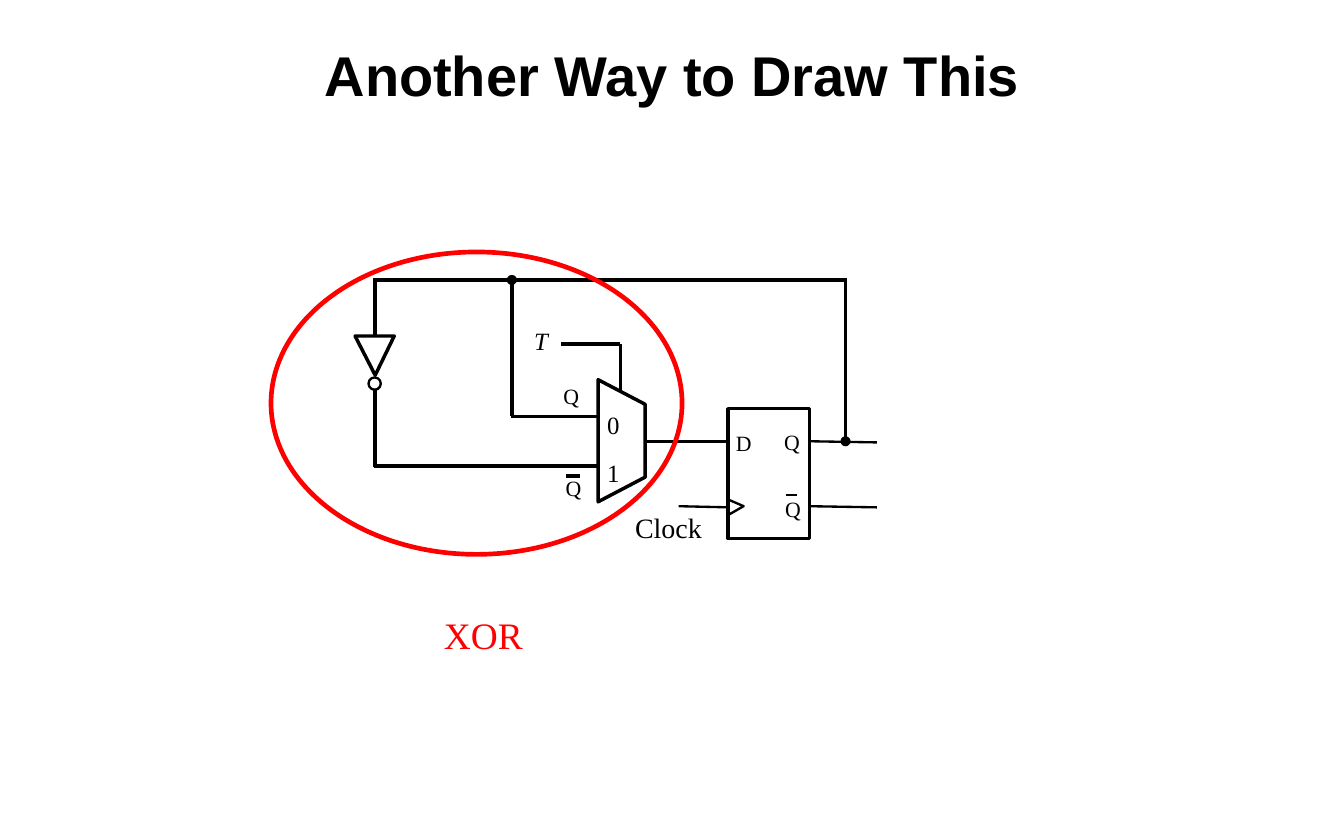
"""Draw a T flip-flop built from a multiplexer, an inverter and a D flip-flop."""
from pptx import Presentation
from pptx.dml.color import RGBColor as RGB
from pptx.enum.shapes import MSO_CONNECTOR as CONN, MSO_SHAPE as SHAPE
from pptx.enum.text import MSO_ANCHOR as ANCHOR, MSO_AUTO_SIZE as AUTO, PP_ALIGN as ALIGN
from pptx.oxml.ns import qn
from pptx.util import Inches, Pt

COLORS = {"ink": "000000", "paper": "FFFFFF", "mark": "FF0000"}


class Circuit:
    head_font, label_font = "Arial", "Times New Roman"

    def __init__(self, slide):
        self.s = slide

    def color(self, name):
        return RGB.from_string(COLORS[name])

    def run(self, p, text, size, font, color="ink", bold=False, italic=False):
        r = p.add_run()
        r.text = text
        f = r.font
        f.name, f.size, f.bold, f.italic = font, Pt(size), bold, italic
        f.color.rgb = self.color(color)

    def title(self, text, x, y, w, h):
        sp = self.s.shapes.title
        sp.left, sp.top, sp.width, sp.height = map(Inches, (x, y, w, h))
        tf = sp.text_frame
        tf.vertical_anchor = ANCHOR.MIDDLE
        p = tf.paragraphs[0]
        p.alignment = ALIGN.CENTER
        self.run(p, text, 36, self.head_font, bold=True)

    def label(self, text, x, y, w, h, size, color="ink", italic=False, align=ALIGN.LEFT):
        sp = self.s.shapes.add_textbox(*map(Inches, (x, y, w, h)))
        tf = sp.text_frame
        tf.word_wrap, tf.auto_size = False, AUTO.SHAPE_TO_FIT_TEXT
        tf.margin_left = tf.margin_top = tf.margin_right = tf.margin_bottom = 0
        p = tf.paragraphs[0]
        p.alignment = align
        self.run(p, text, size, self.label_font, color, italic=italic)

    def wire(self, x1, y1, x2, y2, width=2.25):
        c = self.s.shapes.add_connector(CONN.STRAIGHT, *map(Inches, (x1, y1, x2, y2)))
        c.line.width = Pt(width)
        c.line.color.rgb = self.color("ink")
        sp_pr = c._element.spPr
        sp_pr.append(sp_pr.makeelement(qn("a:effectLst"), {}))

    def style(self, sp, width, fill, line):
        sp.shadow.inherit = False
        if fill:
            sp.fill.solid()
            sp.fill.fore_color.rgb = self.color(fill)
        else:
            sp.fill.background()
        sp.line.width = Pt(width)
        sp.line.color.rgb = self.color(line)

    def shape(self, kind, x, y, w, h, width, fill=None, line="ink"):
        sp = self.s.shapes.add_shape(kind, *map(Inches, (x, y, w, h)))
        self.style(sp, width, fill, line)

    def outline(self, points, width=2.25, close=True):
        pts = [(Inches(x), Inches(y)) for x, y in points]
        fb = self.s.shapes.build_freeform(*pts[0])
        fb.add_line_segments(pts[1:], close=close)
        self.style(fb.convert_to_shape(), width, None, "ink")

    def dot(self, x, y):
        self.shape(SHAPE.OVAL, x - 0.04, y - 0.04, 0.08, 0.08, 0.75, "ink")


def main():
    prs = Presentation()
    prs.slide_width, prs.slide_height = Inches(12), Inches(7.5)
    c = Circuit(prs.slides.add_slide(prs.slide_layouts[5]))
    c.title("Another Way to Draw This", 1, 0.33, 10, 0.67)

    c.shape(SHAPE.RECTANGLE, 6.5, 3.65, 0.73, 1.16, 2.25, "paper")
    c.outline([(6.5, 4.6), (6.64, 4.52), (6.5, 4.46)], 1.5, close=False)
    c.outline([(5.76, 4.26), (5.76, 3.61), (5.34, 3.39), (5.34, 4.48)])
    c.outline([(3.35, 3.35), (3.17, 3), (3.52, 3)])

    for ends in [
        (4.56, 3.72, 5.34, 3.72), (3.34, 4.16, 5.34, 4.16), (6.5, 3.94, 5.76, 3.94),
        (5.54, 3.07, 5.54, 3.49), (5.01, 3.07, 5.54, 3.07),
        (7.56, 2.5, 4.56, 2.5), (3.33, 2.5, 4.58, 2.5),
        (4.57, 2.51, 4.57, 3.71), (7.55, 2.52, 7.55, 3.94),
    ]:
        c.wire(*ends)
    for ends in [(6.06, 4.52, 6.51, 4.53), (7.83, 3.95, 7.23, 3.94), (7.83, 4.53, 7.23, 4.52)]:
        c.wire(*ends, width=1.5)
    for top, bottom in [(2.49, 2.99), (3.48, 4.17)]:
        c.wire(3.35, top, 3.35, bottom, 2.5)
    c.wire(7.12, 4.42, 7.02, 4.42, 1.38)
    c.wire(5.05, 4.25, 5.18, 4.25, 2)

    c.shape(SHAPE.OVAL, 3.29, 3.37, 0.11, 0.11, 1.5, "paper")
    c.dot(7.55, 3.94)
    c.dot(4.57, 2.5)

    c.label("T", 4.77, 2.91, 0.19, 0.27, 16, italic=True)
    for text, y in [("0", 3.66), ("1", 4.09)]:
        c.label(text, 5.42, y, 0.17, 0.27, 16)
    for text, x, y in [("D", 6.57, 3.84), ("Q", 7, 3.83), ("Q", 7.01, 4.43),
                       ("Q", 5.03, 3.42), ("Q", 5.05, 4.24)]:
        c.label(text, x, y, 0.19, 0.24, 14)
    c.label("Clock", 5.67, 4.56, 0.6, 0.3, 18)
    c.label("XOR", 3.96, 5.47, 0.71, 0.41, 24, "mark", align=ALIGN.CENTER)
    c.shape(SHAPE.OVAL, 2.42, 2.25, 3.67, 2.7, 3, line="mark")
    prs.save("out.pptx")


if __name__ == "__main__":
    main()
